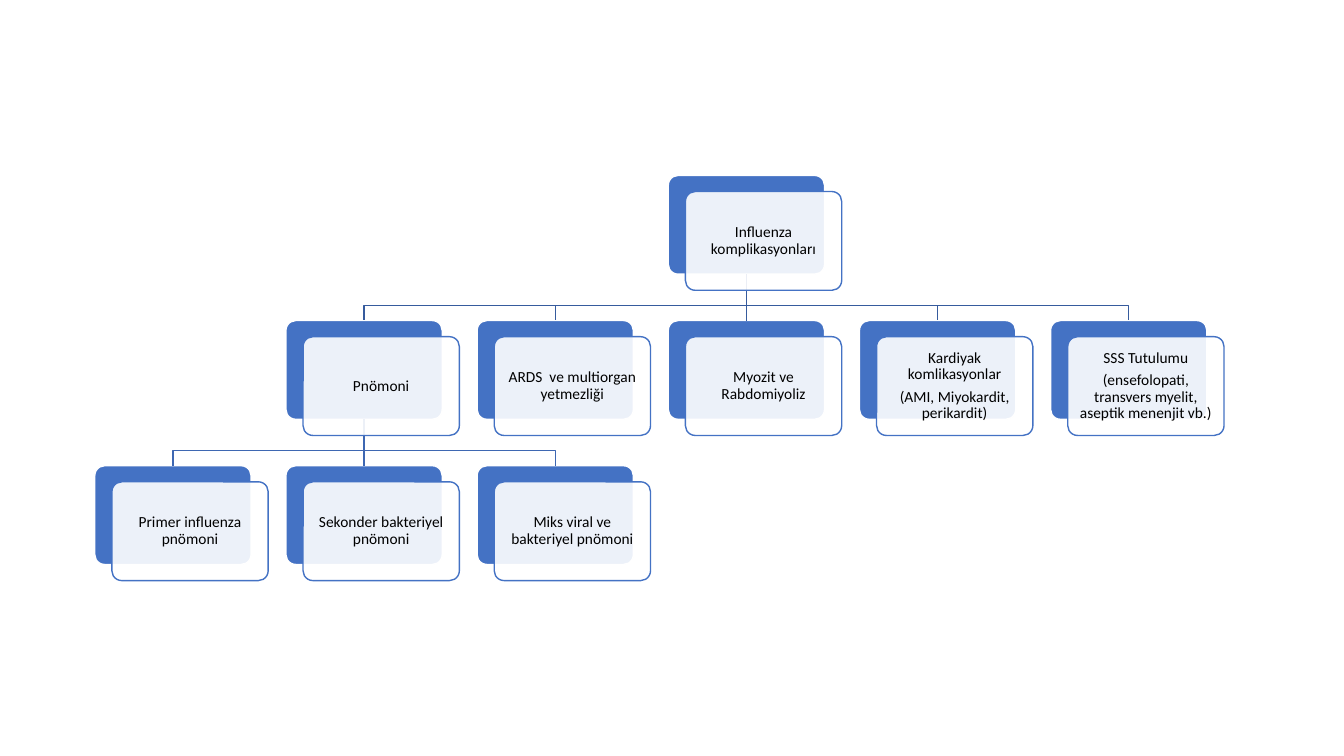
import lxml.etree
import pptx
import pptx.dml.color
import pptx.enum.shapes
import pptx.enum.text
import pptx.oxml.ns
import pptx.util

Inches = pptx.util.Inches
Pt = pptx.util.Pt
RGB = pptx.dml.color.RGBColor.from_string
qn = pptx.oxml.ns.qn
ROUNDED = pptx.enum.shapes.MSO_SHAPE.ROUNDED_RECTANGLE
STRAIGHT = pptx.enum.shapes.MSO_CONNECTOR.STRAIGHT

THEME = {
    "accent": RGB("4472C4"),
    "paper": RGB("FFFFFF"),
    "ink": RGB("000000"),
    "branches": [RGB("365B9D"), RGB("3E67B2")],
    "font": "Calibri",
    "size": Pt(11),
    "line": Pt(1),
}

WIDTH, HEIGHT = 1.55, 0.98
LEFT, TOP = 0.94, 1.74
COLUMN_STEP, ROW_STEP = (10.42 - LEFT) / 5, 1.44
OFFSET_X, OFFSET_Y = 0.17, 0.16
BEND = 0.31

complications = [
    (0, 3, "Influenza komplikasyonları"),
    (1, 1, "Pnömoni"),
    (2, 0, "Primer influenza pnömoni"),
    (2, 1, "Sekonder bakteriyel pnömoni"),
    (2, 2, "Miks viral ve bakteriyel pnömoni"),
    (1, 2, "ARDS  ve multiorgan yetmezliği"),
    (1, 3, "Myozit ve Rabdomiyoliz"),
    (1, 4, "Kardiyak komlikasyonlar\n(AMI, Miyokardit, perikardit)"),
    (1, 5, "SSS Tutulumu\n(ensefolopati, transvers myelit, aseptik menenjit vb.)"),
]
parent_columns = [3, 1]


def add_card(x, y, fill, line):
    card = slide.shapes.add_shape(ROUNDED, Inches(x), Inches(y), Inches(WIDTH), Inches(HEIGHT))
    card.adjustments[0] = 0.1
    card.shadow.inherit = False
    card.fill.solid()
    card.fill.fore_color.rgb = fill
    card.line.color.rgb = line
    card.line.width = THEME["line"]
    return card


presentation = pptx.Presentation()
presentation.slide_width = Inches(13.33)
presentation.slide_height = Inches(7.5)
slide = presentation.slides.add_slide(presentation.slide_layouts[6])

backings = {}
for row, column, wording in complications:
    backings[row, column] = add_card(
        LEFT + column * COLUMN_STEP, TOP + row * ROW_STEP, THEME["accent"], THEME["paper"]
    )

for row, column, wording in complications[1:]:
    parent_column = parent_columns[row - 1]
    start_x = Inches(LEFT + parent_column * COLUMN_STEP + WIDTH / 2)
    start_y = Inches(TOP + (row - 1) * ROW_STEP + HEIGHT)
    end_x = Inches(LEFT + column * COLUMN_STEP + WIDTH / 2)
    end_y = Inches(TOP + row * ROW_STEP)
    if column == parent_column:
        branch = slide.shapes.add_connector(STRAIGHT, start_x, start_y, end_x, end_y)
        branch.begin_connect(backings[row - 1, parent_column], 2)
        branch.end_connect(backings[row, column], 0)
        lxml.etree.SubElement(branch._element.spPr, qn("a:effectLst"))
    else:
        bend_y = start_y + Inches(BEND)
        outline = slide.shapes.build_freeform(start_x, start_y)
        outline.add_line_segments([(start_x, bend_y), (end_x, bend_y), (end_x, end_y)], close=False)
        branch = outline.convert_to_shape()
        branch.fill.background()
        branch.shadow.inherit = False
    branch.line.color.rgb = THEME["branches"][row - 1]
    branch.line.width = THEME["line"]

for row, column, wording in complications:
    card = add_card(
        LEFT + OFFSET_X + column * COLUMN_STEP,
        TOP + OFFSET_Y + row * ROW_STEP,
        THEME["paper"],
        THEME["accent"],
    )
    paper = card._element.spPr.find(qn("a:solidFill"))[0]
    lxml.etree.SubElement(paper, qn("a:alpha"), val="90000")

    frame = card.text_frame
    frame.word_wrap = True
    frame.vertical_anchor = pptx.enum.text.MSO_ANCHOR.MIDDLE
    frame.margin_left = frame.margin_right = Inches(0.05)
    frame.margin_top = frame.margin_bottom = Inches(0.05)
    frame.text = wording
    for paragraph in frame.paragraphs:
        paragraph.alignment = pptx.enum.text.PP_ALIGN.CENTER
        paragraph.line_spacing = 0.9
        paragraph.space_after = Pt(4)
        for run in paragraph.runs:
            run.font.name = THEME["font"]
            run.font.size = THEME["size"]
            run.font.color.rgb = THEME["ink"]

presentation.save("out.pptx")
